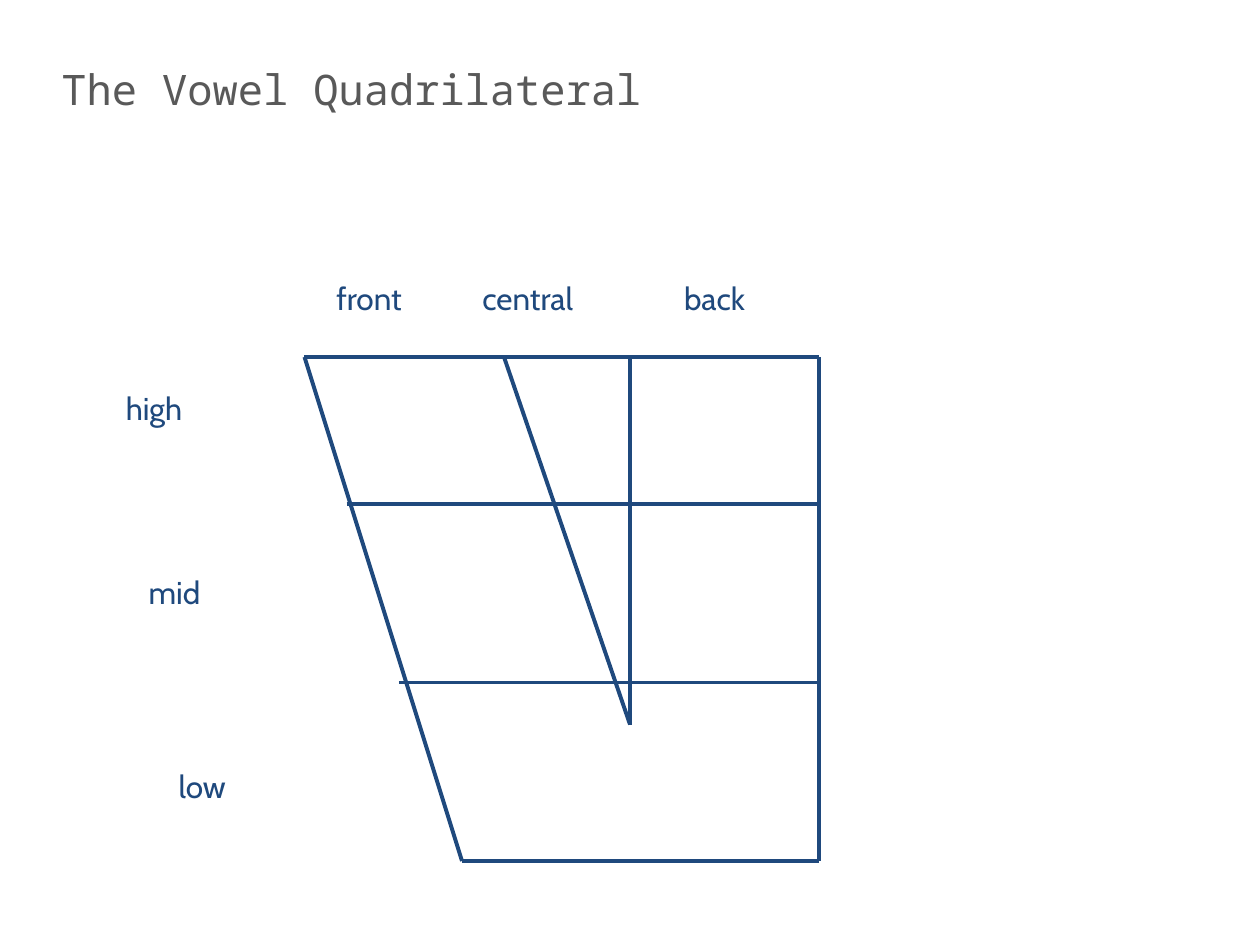
import pptx
import pptx.dml.color
import pptx.enum.shapes
import pptx.enum.text
import pptx.oxml.ns
import pptx.util
from lxml import etree

Pt = pptx.util.Pt
NAVY = pptx.dml.color.RGBColor(0x1F, 0x49, 0x7D)
GREY = pptx.dml.color.RGBColor(0x59, 0x59, 0x59)


def add_text(page, text, left, top, width, height, *, font="Cabin", size=18,
             color=NAVY, anchor=pptx.enum.text.MSO_ANCHOR.TOP, wrap=True):
    box = page.shapes.add_textbox(Pt(left), Pt(top), Pt(width), Pt(height))
    frame = box.text_frame
    frame.word_wrap = wrap
    frame.vertical_anchor = anchor
    span = frame.paragraphs[0].add_run()
    span.text = text
    span.font.name = font
    span.font.size = Pt(size)
    span.font.color.rgb = color


def add_line(page, start, end):
    line = page.shapes.add_connector(
        pptx.enum.shapes.MSO_CONNECTOR.STRAIGHT,
        *(Pt(value) for value in (*start, *end)))
    line.line.color.rgb = NAVY
    line.line.width = Pt(2.25)
    etree.SubElement(line._element.spPr, pptx.oxml.ns.qn("a:effectLst"))


def add_title(page, left, top, width, height):
    add_text(page, "The Vowel Quadrilateral", left, top, width, height,
             font="Noto Sans Mono", size=24, color=GREY,
             anchor=pptx.enum.text.MSO_ANCHOR.MIDDLE)


def add_quadrilateral(page, left, top, width, height):
    right, bottom = left + width, top + height
    low_front = (left + 90, bottom)
    central_tip = (left + 186, top + 210)

    add_line(page, (left, top), (right, top))
    add_line(page, (right, top), (right, bottom))
    add_line(page, (left, top), low_front)
    add_line(page, low_front, (right, bottom))
    for indent, drop in ((54, 186), (24, 84)):
        add_line(page, (left + indent, top + drop), (right, top + drop))
    for offset in (186, 114):
        add_line(page, (left + offset, top), central_tip)


def add_column_labels(page, left, top, height):
    for text, offset, width in (("front", 0, 68.4), ("central", 83.5, 91.4),
                                ("back", 198.7, 64.8)):
        add_text(page, text, left + offset, top, width, height)


def add_row_labels(page, left, top, height):
    for text, offset, drop, width in (("high", 0, 0, 59.8),
                                      ("mid", 13, 105.1, 54.7),
                                      ("low", 30.2, 216, 52.6)):
        add_text(page, text, left + offset, top + drop, width, height,
                 wrap=False)


def main():
    deck = pptx.Presentation()
    deck.slide_width = Pt(720)
    deck.slide_height = Pt(540)
    page = deck.slides.add_slide(deck.slide_layouts[6])
    add_title(page, 28, 13.7, 401, 74.2)
    add_quadrilateral(page, 174, 204, 294, 288)
    add_column_labels(page, 185.1, 156, 36)
    add_row_labels(page, 64.8, 218.9, 36)
    deck.save("out.pptx")


if __name__ == "__main__":
    main()
